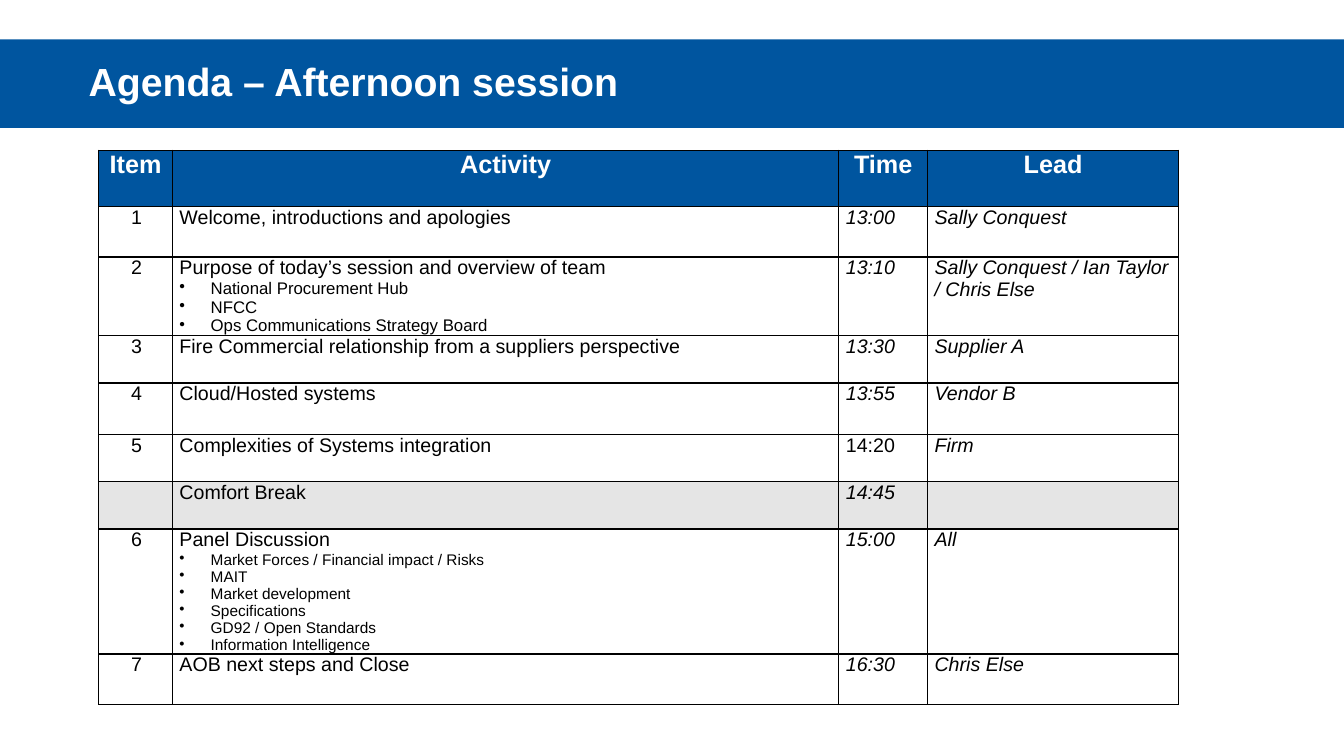
from lxml import etree
from pptx import Presentation
from pptx.dml.color import RGBColor
from pptx.enum import text
from pptx.oxml import ns
from pptx.util import Inches, Pt

BLUE = RGBColor(0x00, 0x55, 0x9F)
WHITE = RGBColor(0xFF, 0xFF, 0xFF)
BLACK = RGBColor(0x00, 0x00, 0x00)
GREY = RGBColor(0xE5, 0xE5, 0xE5)
FONT = "Arial"

TITLE = "Agenda – Afternoon session"
HEADER = ("Item", "Activity", "Time", "Lead")
# item, activity, topics, time, lead
AGENDA = [
    ("1", "Welcome, introductions and apologies", [], "13:00", "Sally Conquest"),
    ("2", "Purpose of today’s session and overview of team",
     ["National Procurement Hub", "NFCC", "Ops Communications Strategy Board"],
     "13:10", "Sally Conquest / Ian Taylor / Chris Else"),
    ("3", "Fire Commercial relationship from a suppliers perspective", [],
     "13:30", "Supplier A"),
    ("4", "Cloud/Hosted systems", [], "13:55", "Vendor B"),
    ("5", "Complexities of Systems integration", [], "14:20", "Firm"),
    ("", "Comfort Break", [], "14:45", ""),
    ("6", "Panel Discussion",
     ["Market Forces / Financial impact / Risks", "MAIT", "Market development",
      "Specifications", "GD92 / Open Standards", "Information Intelligence"],
     "15:00", "All"),
    ("7", "AOB next steps and Close", [], "16:30", "Chris Else"),
]
UPRIGHT_TIMES = {"14:20"}
TOPIC_SIZES = {"2": 12, "6": 11}
COLUMN_WIDTHS = (0.73, 6.61, 0.88, 2.49)
ROW_HEIGHTS = (0.56, 0.5, 0.78, 0.47, 0.51, 0.47, 0.47, 1.24, 0.5)
TABLE_LEFT, TABLE_TOP = 0.98, 1.49


def indent(paragraph, left, first, bullet=None):
    properties = paragraph._p.get_or_add_pPr()
    properties.set("marL", str(Inches(left)))
    properties.set("indent", str(Inches(first)))
    if bullet:
        etree.SubElement(properties, ns.qn("a:buChar")).set("char", bullet)


def style(paragraph, size, color=BLACK, bold=False, italic=False):
    for run in paragraph.runs:
        font = run.font
        font.name, font.size = FONT, Pt(size)
        font.bold, font.italic = bold, italic
        font.color.rgb = color


def add_borders(cell):
    properties = cell._tc.get_or_add_tcPr()
    for position, side in enumerate(("lnL", "lnR", "lnT", "lnB")):
        line = etree.Element(ns.qn(f"a:{side}"), w=str(Pt(1)))
        fill = etree.SubElement(line, ns.qn("a:solidFill"))
        etree.SubElement(fill, ns.qn("a:srgbClr")).set("val", str(BLACK))
        properties.insert(position, line)


def prepare(cell, color):
    cell.margin_left = cell.margin_right = Inches(0.07)
    cell.margin_top = cell.margin_bottom = 0
    cell.fill.solid()
    cell.fill.fore_color.rgb = color
    add_borders(cell)


def add_title(slide, width):
    title = slide.shapes.title
    title.left, title.top = 0, Inches(0.39)
    title.width, title.height = width, Inches(0.88)
    title.fill.solid()
    title.fill.fore_color.rgb = BLUE
    frame = title.text_frame
    frame.text = TITLE
    frame.vertical_anchor = text.MSO_ANCHOR.MIDDLE
    paragraph = frame.paragraphs[0]
    paragraph.alignment = text.PP_ALIGN.LEFT
    paragraph.line_spacing = 0.9
    indent(paragraph, 0.78, 0)
    style(paragraph, 28, WHITE, bold=True)


def fill_row(cells, item, activity, topics, time, lead):
    for cell, words in zip(cells, (item, activity, time, lead)):
        prepare(cell, WHITE if item else GREY)
        cell.text_frame.text = words
    number, subject, start, leader = (cell.text_frame.paragraphs[0] for cell in cells)
    if item:
        indent(number, 0.5, -0.25)
    style(number, 14)
    style(subject, 14)
    style(start, 14, italic=time not in UPRIGHT_TIMES)
    style(leader, 14, italic=True)
    for topic in topics:
        paragraph = cells[1].text_frame.add_paragraph()
        paragraph.text = topic
        indent(paragraph, 0.31, -0.31, "•")
        style(paragraph, TOPIC_SIZES[item])


def add_agenda(slide):
    frame = slide.shapes.add_table(
        len(ROW_HEIGHTS), len(COLUMN_WIDTHS), Inches(TABLE_LEFT), Inches(TABLE_TOP),
        Inches(sum(COLUMN_WIDTHS)), Inches(sum(ROW_HEIGHTS)))
    table = frame.table
    table.first_row = table.horz_banding = False
    for column, width in zip(table.columns, COLUMN_WIDTHS):
        column.width = Inches(width)
    for row, height in zip(table.rows, ROW_HEIGHTS):
        row.height = Inches(height)
    header, *body = (list(row.cells) for row in table.rows)
    for cell, heading in zip(header, HEADER):
        prepare(cell, BLUE)
        cell.text_frame.text = heading
        paragraph = cell.text_frame.paragraphs[0]
        paragraph.alignment = text.PP_ALIGN.CENTER
        style(paragraph, 18, WHITE, bold=True)
    for cells, entry in zip(body, AGENDA):
        fill_row(cells, *entry)


def main():
    presentation = Presentation()
    presentation.slide_width = Inches(13.33)
    presentation.slide_height = Inches(7.5)
    slide = presentation.slides.add_slide(presentation.slide_layouts[5])
    add_title(slide, presentation.slide_width)
    add_agenda(slide)
    presentation.save("out.pptx")


if __name__ == "__main__":
    main()
